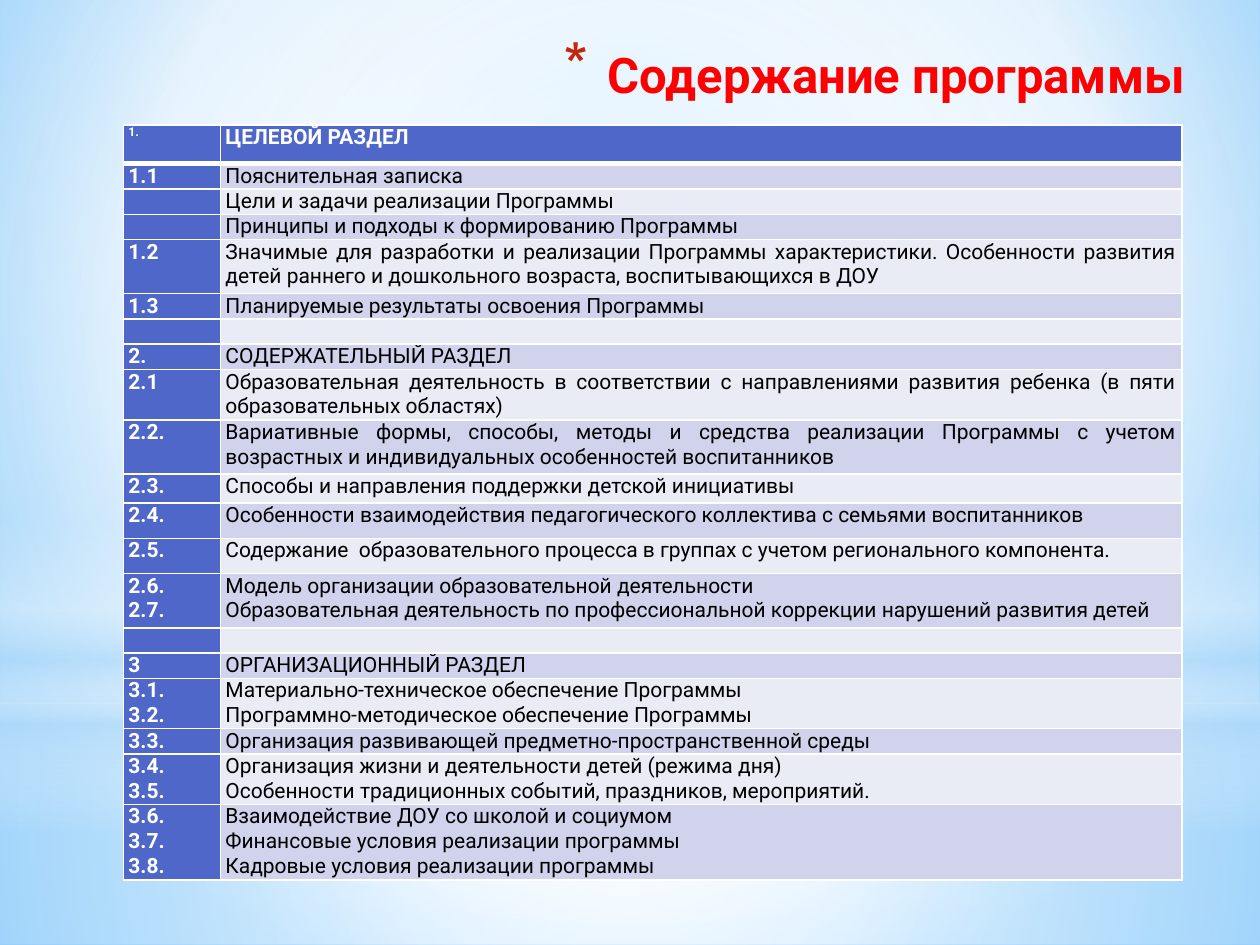
from lxml.etree import SubElement
from pptx import Presentation
from pptx.dml.color import RGBColor
from pptx.enum.shapes import MSO_SHAPE
from pptx.enum.text import MSO_ANCHOR, PP_ALIGN
from pptx.oxml.ns import qn
from pptx.util import Inches, Pt

FONT = "Roboto"
WHITE = RGBColor(0xFF, 0xFF, 0xFF)
BLACK = RGBColor(0x00, 0x00, 0x00)
RED = RGBColor(0xFF, 0x00, 0x00)
BULLET_RED = RGBColor(0xC3, 0x26, 0x0C)
BLUE = RGBColor(0x4E, 0x67, 0xC8)
DARK_BAND = RGBColor(0xD0, 0xD3, 0xEB)
LIGHT_BAND = RGBColor(0xE9, 0xEB, 0xF5)
SKY = RGBColor(0x9E, 0xD5, 0xFF)
DEEP_SKY = RGBColor(0x5B, 0xB9, 0xFF)
PALE_SKY = RGBColor(0xB4, 0xDC, 0xFA)

TITLE = "Содержание программы"

# Row height, numbers, headings
ROWS = [
    (0.31, ["1."], ["ЦЕЛЕВОЙ РАЗДЕЛ"]),
    (0.15, ["1.1"], ["Пояснительная записка"]),
    (0.15, [""], ["Цели и задачи реализации Программы"]),
    (0.15, [""], ["Принципы и подходы к формированию Программы"]),
    (0.43, ["1.2"], ["Значимые для разработки и реализации Программы характеристики. "
                     "Особенности развития детей раннего и дошкольного возраста, "
                     "воспитывающихся в ДОУ"]),
    (0.15, ["1.3"], ["Планируемые результаты освоения Программы"]),
    (0.15, [""], [""]),
    (0.15, ["2."], ["СОДЕРЖАТЕЛЬНЫЙ РАЗДЕЛ"]),
    (0.28, ["2.1"], ["Образовательная деятельность в соответствии с направлениями "
                     "развития ребенка (в пяти образовательных областях)"]),
    (0.43, ["2.2."], ["Вариативные формы, способы, методы и средства реализации Программы "
                      "с учетом возрастных и индивидуальных особенностей воспитанников"]),
    (0.23, ["2.3."], ["Способы и направления поддержки детской инициативы"]),
    (0.28, ["2.4."], ["Особенности взаимодействия педагогического коллектива "
                      "с семьями воспитанников"]),
    (0.28, ["2.5."], ["Содержание  образовательного процесса в группах "
                      "с учетом регионального компонента."]),
    (0.43, ["2.6.", "2.7."], ["Модель организации образовательной деятельности",
                              "Образовательная деятельность по профессиональной "
                              "коррекции нарушений развития детей"]),
    (0.15, [""], [""]),
    (0.15, ["3"], ["ОРГАНИЗАЦИОННЫЙ РАЗДЕЛ"]),
    (0.3, ["3.1.", "3.2."], ["Материально-техническое обеспечение Программы",
                             "Программно-методическое обеспечение Программы"]),
    (0.15, ["3.3."], ["Организация развивающей предметно-пространственной среды"]),
    (0.3, ["3.4.", "3.5."], ["Организация жизни и деятельности детей (режима дня)",
                             "Особенности традиционных событий, праздников, мероприятий."]),
    (0.45, ["3.6.", "3.7.", "3.8."], ["Взаимодействие ДОУ со школой и социумом",
                                      "Финансовые условия реализации программы",
                                      "Кадровые условия реализации программы"]),
]
COLUMN_WIDTHS = [0.77, 7.63]

# Gradient stops: position %, colour, opacity %
BACKGROUND_STOPS = [(0, SKY, 100), (60, WHITE, 100), (100, DEEP_SKY, 100)]
CENTRE = (50, 50, 50, 50)
# Preset, (left, top, width, height), stops, focus of a circular gradient
GLOWS = [
    (MSO_SHAPE.RECTANGLE, (0, 5.58, 10, 1.92),
     [(0, WHITE, 91), (37, WHITE, 76), (100, PALE_SKY, 79)], CENTRE),
    (MSO_SHAPE.RECTANGLE, (0, 0, 10, 5.58),
     [(0, WHITE, 89), (48, WHITE, 62), (100, PALE_SKY, 79)], CENTRE),
    (MSO_SHAPE.RECTANGLE, (0, 4.12, 10, 2.5),
     [(0, WHITE, 0), (29, WHITE, 30), (45, PALE_SKY, 40), (55, WHITE, 26),
      (65, PALE_SKY, 60), (100, WHITE, 0)], None),
    (MSO_SHAPE.OVAL, (0, 1.75, 10, 5.58), [(0, WHITE, 100), (56, WHITE, 0)], CENTRE),
]


def add_node(parent, tag, **attributes):
    return SubElement(parent, qn(tag), {key: str(value) for key, value in attributes.items()})


def set_gradient(owner, fill, stops, focus):
    """Circular gradient around focus, or top to bottom when focus is None."""
    fill.solid()
    solid = owner.element.find(".//" + qn("a:solidFill"))
    gradient = add_node(solid.getparent(), "a:gradFill", rotWithShape=1)
    solid.getparent().replace(solid, gradient)
    stop_list = add_node(gradient, "a:gsLst")
    for position, color, opacity in stops:
        stop = add_node(stop_list, "a:gs", pos=position * 1000)
        color_node = add_node(stop, "a:srgbClr", val=color)
        if opacity < 100:
            add_node(color_node, "a:alpha", val=opacity * 1000)
    if focus:
        circle = add_node(gradient, "a:path", path="circle")
        sides = {side: value * 1000 for side, value in zip("ltrb", focus)}
        add_node(circle, "a:fillToRect", **sides)
    else:
        add_node(gradient, "a:lin", ang=90 * 60000, scaled=0)


def add_title(slide):
    box = slide.shapes.add_textbox(Inches(0.5), Inches(0.3), Inches(9), Inches(1.01))
    frame = box.text_frame
    frame.word_wrap = True
    frame.vertical_anchor = MSO_ANCHOR.TOP
    frame.text = TITLE
    paragraph = frame.paragraphs[0]
    paragraph.alignment = PP_ALIGN.RIGHT
    font = paragraph.runs[0].font
    font.name, font.size, font.bold = FONT, Pt(28), True
    font.color.rgb = RED
    properties = paragraph._p.get_or_add_pPr()
    properties.set("marL", str(Inches(0.35)))
    properties.set("indent", str(Inches(-0.35)))
    add_node(add_node(properties, "a:buClr"), "a:srgbClr", val=BULLET_RED)
    add_node(properties, "a:buSzPct", val=128000)
    add_node(properties, "a:buChar", char="*")


def set_borders(cell, bottom_width, top_width):
    properties = cell._tc.get_or_add_tcPr()
    for side, width in (("L", 1), ("R", 1), ("T", top_width), ("B", bottom_width)):
        line = add_node(properties, "a:ln" + side, w=Pt(width))
        add_node(add_node(line, "a:solidFill"), "a:srgbClr", val=WHITE)


def fill_cell(cell, lines, size, color, bold, background):
    cell.margin_left = cell.margin_right = Inches(0.04)
    cell.margin_top = cell.margin_bottom = 0
    cell.fill.solid()
    cell.fill.fore_color.rgb = background
    cell.text_frame.text = "\n".join(lines)
    for paragraph in cell.text_frame.paragraphs:
        paragraph.alignment = PP_ALIGN.JUSTIFY
        for run in paragraph.runs:
            run.font.name, run.font.size, run.font.bold = FONT, Pt(size), bold
            run.font.color.rgb = color
        if not paragraph.runs:
            end = add_node(paragraph._p, "a:endParaRPr", sz=size * 100)
            add_node(end, "a:latin", typeface=FONT)


def add_contents_table(slide):
    height = sum(row[0] for row in ROWS)
    frame = slide.shapes.add_table(len(ROWS), 2, Inches(0.98), Inches(0.99),
                                   Inches(sum(COLUMN_WIDTHS)), Inches(height))
    table = frame.table
    for column, width in zip(table.columns, COLUMN_WIDTHS):
        column.width = Inches(width)
    for index, (row_height, numbers, headings) in enumerate(ROWS):
        table.rows[index].height = Inches(row_height)
        header = index == 0
        number_cell, heading_cell = table.rows[index].cells
        for cell in (number_cell, heading_cell):
            set_borders(cell, 3 if header else 1, 3 if index == 1 else 1)
        fill_cell(number_cell, numbers, 7 if header else 12, WHITE, True, BLUE)
        band = BLUE if header else DARK_BAND if index % 2 else LIGHT_BAND
        fill_cell(heading_cell, headings, 12, WHITE if header else BLACK, header, band)


def main():
    presentation = Presentation()
    presentation.slide_width, presentation.slide_height = Inches(10), Inches(7.5)
    slide = presentation.slides.add_slide(presentation.slide_layouts[6])
    set_gradient(slide, slide.background.fill, BACKGROUND_STOPS, (20, 10, 20, 60))
    for preset, place, stops, focus in GLOWS:
        glow = slide.shapes.add_shape(preset, *map(Inches, place))
        glow.shadow.inherit = False
        glow.line.fill.background()
        set_gradient(glow, glow.fill, stops, focus)
    add_title(slide)
    add_contents_table(slide)
    presentation.save("out.pptx")


if __name__ == "__main__":
    main()
